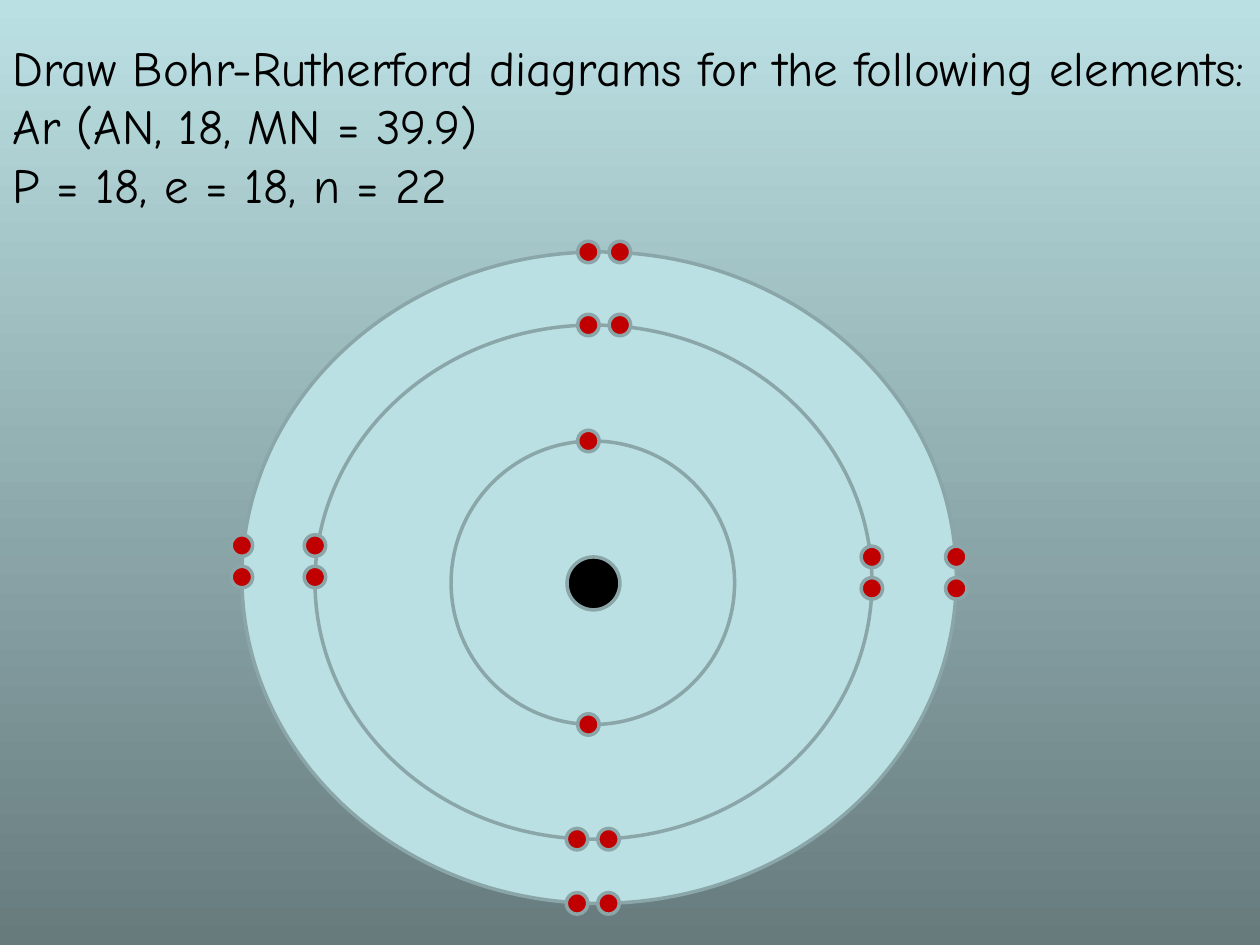
from dataclasses import dataclass

from pptx import Presentation
from pptx.dml.color import RGBColor
from pptx.enum.shapes import MSO_SHAPE
from pptx.enum.text import MSO_ANCHOR, MSO_AUTO_SIZE, PP_ALIGN
from pptx.util import Inches, Pt


@dataclass(frozen=True)
class Theme:
    font: str = "Comic Neue"
    title_size: int = 28
    line_width: int = 2
    text: str = "000000"
    sky: str = "BBE0E3"
    dusk: str = "677B7D"
    outline: str = "8AA6A8"
    nucleus: str = "000000"
    electron: str = "C00000"


THEME = Theme()
ELECTRON_SIZE = 0.17
PAIRS = {
    "top": (4.67, 4.92),
    "bottom": (4.58, 4.83),
    "left": (4.33, 4.58),
    "right": (4.42, 4.67),
}
SINGLES = {"top": (4.67,), "bottom": (4.67,)}
SHELLS = [
    ((1.92, 2, 5.67, 5.17), PAIRS),
    ((2.5, 2.58, 4.42, 4.08), PAIRS),
    ((3.58, 3.5, 2.25, 2.25), SINGLES),
]
NUCLEUS_BOX = (4.5, 4.42, 0.42, 0.42)
TITLE_BOX = (0, 0, 10, 1.99)
TITLE_LINES = [
    "Draw Bohr-Rutherford diagrams for the following elements:",
    "Ar (AN, 18, MN = 39.9)",
    "P = 18, e = 18, n = 22",
]


def write_text(frame, lines, *, font, size, color, align=PP_ALIGN.LEFT):
    for index, line in enumerate(lines):
        para = frame.add_paragraph() if index else frame.paragraphs[0]
        para.alignment = align
        span = para.add_run()
        span.text = line
        span.font.name = font
        span.font.size = Pt(size)
        span.font.color.rgb = RGBColor.from_string(color)


def paint_background(page):
    fill = page.background.fill
    fill.gradient()
    fill.gradient_angle = 270
    for stop, position, color in zip(
        fill.gradient_stops, (0, 1), (THEME.sky, THEME.dusk)
    ):
        stop.position = position
        stop.color.rgb = RGBColor.from_string(color)


def place_title(page, box):
    title = page.shapes.title
    title.left, title.top, title.width, title.height = map(Inches, box)
    frame = title.text_frame
    frame.word_wrap = True
    frame.auto_size = MSO_AUTO_SIZE.NONE
    frame.vertical_anchor = MSO_ANCHOR.MIDDLE
    write_text(frame, TITLE_LINES, font=THEME.font, size=THEME.title_size,
               color=THEME.text)


def add_circle(page, box, color):
    circle = page.shapes.add_shape(MSO_SHAPE.OVAL, *map(Inches, box))
    circle.shadow.inherit = False
    circle.fill.solid()
    circle.fill.fore_color.rgb = RGBColor.from_string(color)
    circle.line.color.rgb = RGBColor.from_string(THEME.outline)
    circle.line.width = Pt(THEME.line_width)


def place_shell(page, box, electrons):
    left, top, width, height = box
    edges = {"left": left, "right": left + width,
             "top": top, "bottom": top + height}
    add_circle(page, box, THEME.sky)
    for side, offsets in electrons.items():
        for offset in offsets:
            across, down = edges[side], offset
            if side in ("top", "bottom"):
                across, down = down, across
            corner = (across - ELECTRON_SIZE / 2, down - ELECTRON_SIZE / 2)
            add_circle(page, (*corner, ELECTRON_SIZE, ELECTRON_SIZE),
                       THEME.electron)


def main():
    deck = Presentation()
    deck.slide_width, deck.slide_height = Inches(10), Inches(7.5)
    page = deck.slides.add_slide(deck.slide_layouts.get_by_name("Title Only"))
    paint_background(page)
    place_title(page, TITLE_BOX)
    for box, electrons in SHELLS:
        place_shell(page, box, electrons)
    add_circle(page, NUCLEUS_BOX, THEME.nucleus)
    deck.save("out.pptx")


if __name__ == "__main__":
    main()
